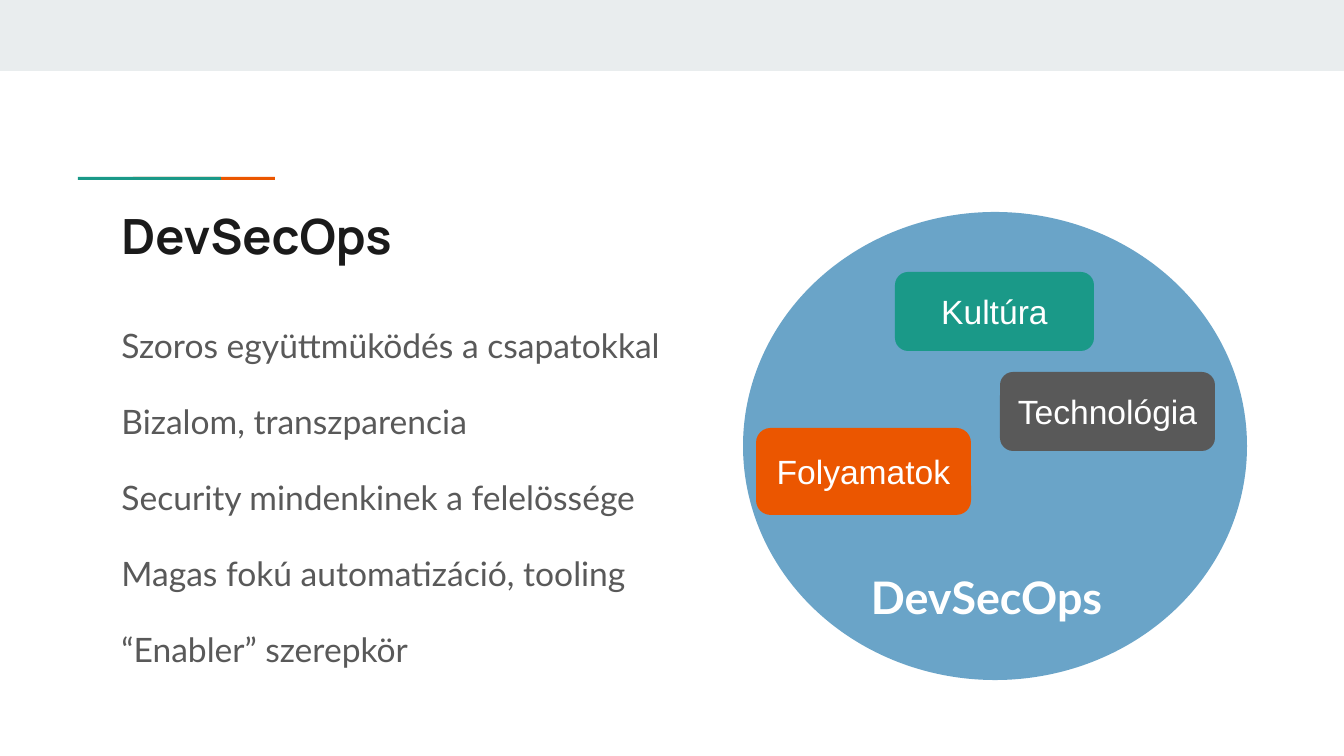
from lxml.etree import SubElement
from pptx import Presentation
from pptx.dml.color import RGBColor
from pptx.enum.shapes import MSO_SHAPE as SHAPE
from pptx.enum.text import MSO_ANCHOR as ANCHOR, MSO_AUTO_SIZE as AUTO, PP_ALIGN as ALIGN
from pptx.oxml.ns import qn
from pptx.util import Inches, Pt

WHITE = RGBColor(0xFF, 0xFF, 0xFF)
INK = RGBColor(0x1A, 0x1A, 0x1A)
GREY = RGBColor(0x59, 0x59, 0x59)
PALE = RGBColor(0xE9, 0xED, 0xEE)
GREEN = RGBColor(0x1A, 0x99, 0x88)
ORANGE = RGBColor(0xEB, 0x56, 0x00)
BLUE = RGBColor(0x6A, 0xA4, 0xC8)

TITLE = "DevSecOps"
POINTS = [
    "Szoros együttmüködés a csapatokkal",
    "Bizalom, transzparencia",
    "Security mindenkinek a felelössége",
    "Magas fokú automatizáció, tooling",
    "“Enabler” szerepkör",
]
# Boxes are left, top, width, height in px
BACKDROP = [
    (SHAPE.RECTANGLE, (0, 0, 1344, 71), PALE),
    (SHAPE.RECTANGLE, (133, 177, 142, 3), ORANGE),
    (SHAPE.RECTANGLE, (78, 177, 143, 3), GREEN),
    (SHAPE.OVAL, (743, 212, 504, 468), BLUE),
]
PILLARS = [
    ("Folyamatok", (756, 428, 215, 87), ORANGE),
    ("Technológia", (1000, 372, 215, 79), GREY),
    ("Kultúra", (895, 272, 199, 79), GREEN),
]
TITLE_BOX = (108, 193, 1130, 79)
BODY_BOX = (108, 305, 1130, 332)
CAPTION_BOX = (816, 556, 341, 94)


def px(n):
    return round(n * 914400 / 134.4)


def place(s, box):
    s.left, s.top, s.width, s.height = map(px, box)


def setup_frame(s, anchor=ANCHOR.TOP):
    tf = s.text_frame
    tf.word_wrap = True
    tf.auto_size = AUTO.NONE
    tf.vertical_anchor = anchor
    tf.margin_left = tf.margin_top = tf.margin_right = tf.margin_bottom = Inches(0.1)
    return tf


def write(p, text, size, font, color, bold=False, align=ALIGN.LEFT):
    p.alignment = align
    r = p.add_run()
    r.text = text
    r.font.size, r.font.name, r.font.bold = Pt(size), font, bold
    r.font.color.rgb = color


def add_shape(slide, kind, box, color):
    s = slide.shapes.add_shape(kind, *map(px, box))
    s.shadow.inherit = False
    s.fill.solid()
    s.fill.fore_color.rgb = color
    s.line.fill.background()
    return s


def add_points(tf):
    for i, text in enumerate(POINTS):
        p = tf.add_paragraph() if i else tf.paragraphs[0]
        pPr = p._p.get_or_add_pPr()
        pPr.set("marL", "0")
        pPr.set("indent", "0")
        SubElement(pPr, qn("a:buNone"))
        p.line_spacing = 1.15
        p.space_before = Pt(16 if i else 0)
        write(p, text, 18, "Lato", GREY)


def main():
    prs = Presentation()
    prs.slide_width, prs.slide_height = px(1344), px(756)
    slide = prs.slides.add_slide(prs.slide_layouts[1])
    title, body = slide.placeholders

    for kind, box, color in BACKDROP:
        add_shape(slide, kind, box, color)

    place(title, TITLE_BOX)
    write(setup_frame(title).paragraphs[0], TITLE, 26, "Manrope", INK, bold=True)
    place(body, BODY_BOX)
    add_points(setup_frame(body))

    caption = slide.shapes.add_textbox(*map(px, CAPTION_BOX))
    write(setup_frame(caption).paragraphs[0], TITLE, 24, "Lato", WHITE,
          bold=True, align=ALIGN.CENTER)

    for text, box, color in PILLARS:
        s = add_shape(slide, SHAPE.ROUNDED_RECTANGLE, box, color)
        tf = setup_frame(s, ANCHOR.MIDDLE)
        write(tf.paragraphs[0], text, 18, "Arial", WHITE, align=ALIGN.CENTER)

    prs.save("out.pptx")


if __name__ == "__main__":
    main()
